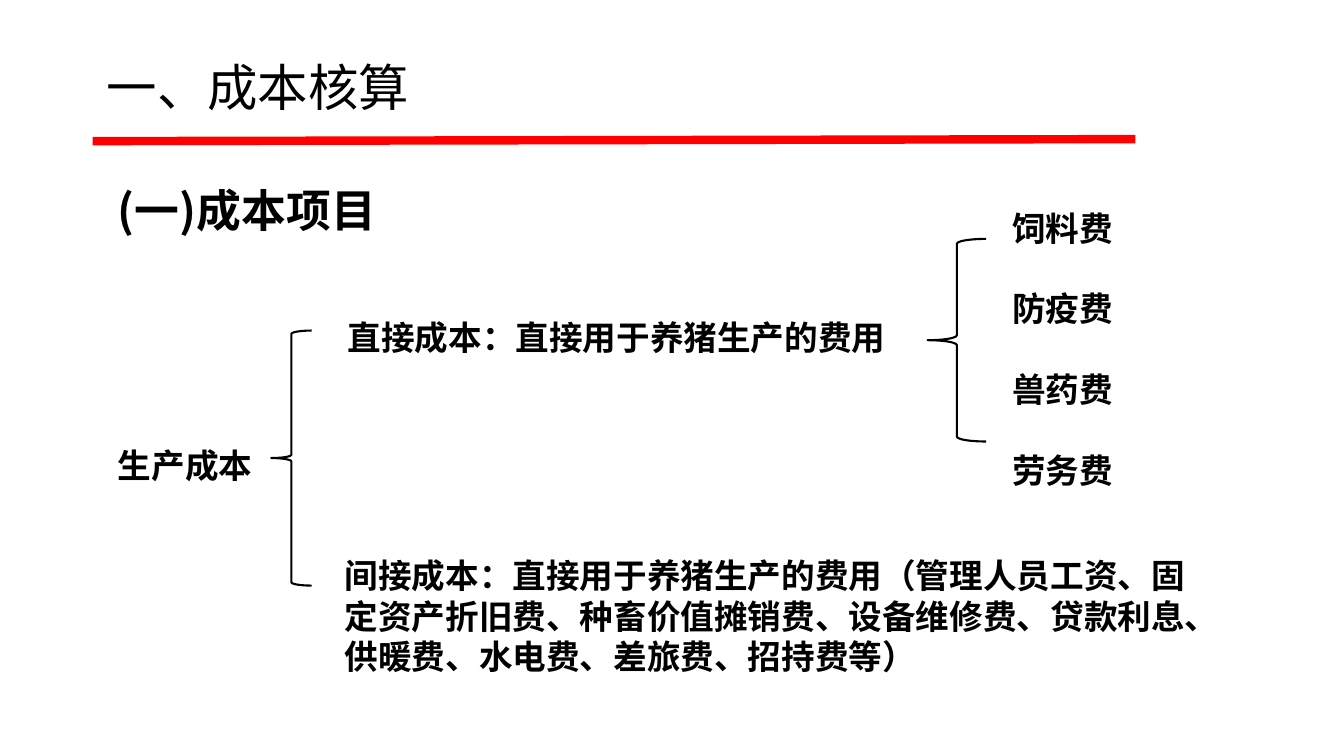
from dataclasses import dataclass
from lxml import etree
from pptx import Presentation
from pptx import util as u
from pptx.dml import color
from pptx.enum import shapes, text
from pptx.oxml import ns


@dataclass(frozen=True)
class Theme:
    face: str = "Noto Sans CJK SC"
    ink: str = "000000"
    rule: str = "FF0000"
    title: int = 36
    head: int = 32
    body: int = 24


THEME = Theme()


def write(slide, box, lines, size=THEME.body, bold=True, gap=0, pitch=None,
          anchor=text.MSO_ANCHOR.TOP, first=0):
    """Place a text box with one paragraph for each line."""
    frame = slide.shapes.add_textbox(*map(u.Inches, box)).text_frame
    frame.word_wrap = True
    frame.vertical_anchor = anchor
    for i, line in enumerate(lines):
        para = frame.add_paragraph() if i else frame.paragraphs[0]
        para.text = line
        para.space_before = u.Pt(gap if i else first)
        if pitch:
            para.line_spacing = pitch
        font = para.font
        font.size, font.bold, font.name = u.Pt(size), bold, THEME.face
        font.color.rgb = color.RGBColor.from_string(THEME.ink)
        # East Asian text takes the same face
        latin = para._p.find(".//" + ns.qn("a:latin"))
        asian = etree.Element(ns.qn("a:ea"), typeface=THEME.face)
        latin.addnext(asian)


def brace(slide, box):
    mark = slide.shapes.add_shape(
        shapes.MSO_SHAPE.LEFT_BRACE, *map(u.Inches, box))
    mark.shadow.inherit = False
    mark.fill.background()
    mark.line.color.rgb = color.RGBColor.from_string(THEME.ink)
    mark.line.width = u.Pt(1.5)


def header(slide, x, y, w, h):
    # Title with the red rule beneath it
    rule = slide.shapes.add_connector(
        shapes.MSO_CONNECTOR.STRAIGHT, u.Inches(x - 0.04), u.Inches(y + 1.23),
        u.Inches(x + 10.3), u.Inches(y + 1.21))
    rule.line.color.rgb = color.RGBColor.from_string(THEME.rule)
    rule.line.width = u.Pt(6)
    etree.SubElement(rule._element.spPr, ns.qn("a:effectLst"))
    write(slide, (x, y, w, h), ["一、成本核算"], THEME.title, bold=False,
          pitch=0.9, anchor=text.MSO_ANCHOR.MIDDLE)


def costs(slide, x, y, w):
    # Section heading
    write(slide, (x, y, w, 0.78), ["(一)成本项目"], THEME.head, pitch=1.5)
    # Root and its two branches
    write(slide, (x, y + 2.86, 1.62, 0.5), ["生产成本"])
    brace(slide, (x + 1.62, y + 1.78, 0.4, 2.53))
    write(slide, (x + 2.28, y + 1.59, 5.97, 0.91),
          ["直接成本：直接用于养猪生产的费用"])
    write(slide, (x + 2.25, y + 3.96, 8.56, 1.31),
          ["间接成本：直接用于养猪生产的费用（管理人员工资、固定资产折旧费、"
           "种畜价值摊销费、设备维修费、贷款利息、供暖费、水电费、差旅费、招持费等）"])
    # Direct cost items
    brace(slide, (x + 8.13, y + 0.87, 0.58, 2.01))
    write(slide, (x + 8.87, y + 0.51, 2.48, 2.93),
          ["饲料费", "防疫费", "兽药费", "劳务费"], gap=28.8)


def main():
    deck = Presentation()
    deck.slide_width, deck.slide_height = u.Inches(13.33), u.Inches(7.5)
    slide = deck.slides.add_slide(deck.slide_layouts[6])
    header(slide, 0.96, 0.17, 11.5, 1.45)
    costs(slide, 1.07, 1.5, 11.18)
    deck.save("out.pptx")


if __name__ == "__main__":
    main()
